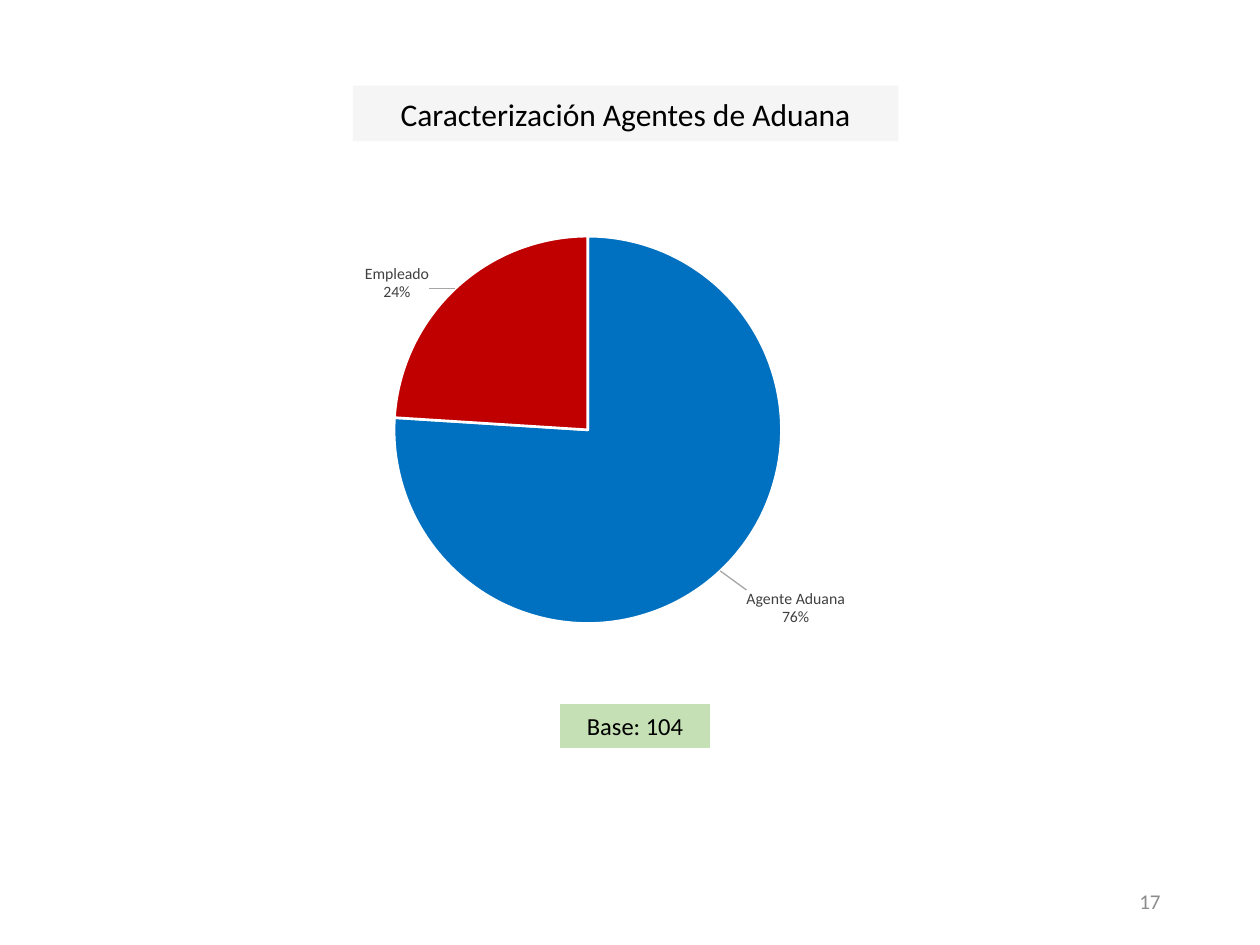
from pptx import Presentation
from pptx.chart.data import CategoryChartData
from pptx.dml.color import RGBColor
from pptx.enum.chart import XL_CHART_TYPE, XL_LABEL_POSITION
from pptx.enum.shapes import MSO_SHAPE
from pptx.enum.text import MSO_ANCHOR, MSO_AUTO_SIZE, PP_ALIGN
from pptx.oxml import parse_xml
from pptx.oxml.ns import nsdecls
from pptx.util import Inches, Pt

FONT = "Calibri"
BLACK = RGBColor(0x00, 0x00, 0x00)
WHITE = RGBColor(0xFF, 0xFF, 0xFF)
GRAY = RGBColor(0x8C, 0x8C, 0x8C)
DARK_GRAY = RGBColor(0x40, 0x40, 0x40)
LIGHT_GRAY = RGBColor(0xF5, 0xF5, 0xF5)
GREEN = RGBColor(0xC5, 0xE0, 0xB4)
BLUE = RGBColor(0x00, 0x70, 0xC0)
RED = RGBColor(0xC0, 0x00, 0x00)

# Category, value, slice colour, label shift as a share of the chart size
SLICES = [
    ("Agente Aduana", 76, BLUE, (0.03, 0.03)),
    ("Empleado", 24, RED, (-0.03, 0.04)),
]


def style_font(font, size, color):
    font.name = FONT
    font.size = Pt(size)
    font.color.rgb = color


def set_text(sp, text, size, color=BLACK, align=PP_ALIGN.CENTER):
    tf = sp.text_frame
    tf.word_wrap = True
    tf.auto_size = MSO_AUTO_SIZE.NONE
    tf.vertical_anchor = MSO_ANCHOR.MIDDLE
    p = tf.paragraphs[0]
    p.alignment = align
    r = p.add_run()
    r.text = text
    style_font(r.font, size, color)


def add_title(slide, text):
    sp = slide.shapes.title
    sp.left, sp.top = Inches(2.8), Inches(0.68)
    sp.width, sp.height = Inches(4.33), Inches(0.44)
    sp.fill.solid()
    sp.fill.fore_color.rgb = LIGHT_GRAY
    set_text(sp, text, 18)


def add_base(slide, text):
    sp = slide.shapes.add_shape(MSO_SHAPE.RECTANGLE, Inches(4.45), Inches(5.59),
                                Inches(1.18), Inches(0.34))
    sp.shadow.inherit = False
    sp.fill.solid()
    sp.fill.fore_color.rgb = GREEN
    sp.line.color.rgb = GREEN
    sp.line.width = Pt(0.75)
    set_text(sp, text, 14)


def add_page_number(slide, text):
    box = slide.shapes.add_textbox(Inches(7.06), Inches(6.95), Inches(2.25), Inches(0.4))
    set_text(box, text, 12, color=GRAY, align=PP_ALIGN.RIGHT)


def manual_layout(x, y, extra=""):
    return parse_xml(
        f'<c:layout {nsdecls("c")}><c:manualLayout>{extra}'
        f'<c:x val="{x}"/><c:y val="{y}"/></c:manualLayout></c:layout>')


def place_plot(chart, x, y, w, h):
    """Fix the inner plot area, given as shares of the chart size."""
    layout = manual_layout(
        x, y, '<c:layoutTarget val="inner"/><c:xMode val="edge"/><c:yMode val="edge"/>')
    for tag, value in (("w", w), ("h", h)):
        layout[0].append(parse_xml(f'<c:{tag} {nsdecls("c")} val="{value}"/>'))
    plot_area = chart.element.xpath(".//c:plotArea")[0]
    for old in plot_area.xpath("./c:layout"):
        plot_area.remove(old)
    plot_area.insert(0, layout)


def style_slice(point, color):
    point.format.fill.solid()
    point.format.fill.fore_color.rgb = color
    point.format.line.color.rgb = WHITE
    point.format.line.width = Pt(1.5)


def format_labels(chart, series):
    """Show category over percentage, outside the pie, with leader lines."""
    labels = series.data_labels
    labels.show_value = False
    labels.show_category_name = labels.show_percentage = True
    labels.number_format = "0%"
    labels.number_format_is_linked = False
    labels.position = XL_LABEL_POSITION.OUTSIDE_END
    style_font(labels.font, 9, DARK_GRAY)
    for i in range(len(SLICES)):
        label = series.points[i].data_label
        style_font(label.font, 9, DARK_GRAY)
        label.position = XL_LABEL_POSITION.OUTSIDE_END

    separator = f'<c:separator {nsdecls("c")}>\n</c:separator>'
    for d, (_, _, _, shift) in zip(chart.element.xpath(".//c:dLbl"), SLICES):
        d.xpath("./c:idx")[0].addnext(manual_layout(*shift))
        d.xpath("./c:showVal")[0].set("val", "0")
        for tag in ("showCatName", "showPercent"):
            d.xpath(f"./c:{tag}")[0].set("val", "1")
        d.xpath("./c:showBubbleSize")[0].addnext(parse_xml(separator))
        d.xpath("./c:layout")[0].addnext(parse_xml(
            f'<c:numFmt {nsdecls("c")} formatCode="0%" sourceLinked="0"/>'))

    leader = chart.element.xpath(".//c:ser/c:dLbls/c:showLeaderLines")[0]
    leader.set("val", "1")
    leader.addprevious(parse_xml(separator))
    leader.addnext(parse_xml(
        f'<c:leaderLines {nsdecls("c", "a")}><c:spPr><a:ln w="9525"><a:solidFill>'
        '<a:srgbClr val="A6A6A6"/></a:solidFill></a:ln></c:spPr></c:leaderLines>'))


def add_pie(slide):
    data = CategoryChartData()
    data.categories = [name for name, *_ in SLICES]
    data.add_series("Series 1", [value for _, value, *_ in SLICES])
    chart = slide.shapes.add_chart(XL_CHART_TYPE.PIE, Inches(2.01), Inches(1.62),
                                   Inches(5.59), Inches(3.62), data).chart
    chart.has_legend = False
    chart.has_title = False
    style_font(chart.font, 10, BLACK)
    plot = chart.plots[0]
    plot.vary_by_categories = True
    series = plot.series[0]
    for i, (_, _, color, _) in enumerate(SLICES):
        style_slice(series.points[i], color)
    format_labels(chart, series)
    place_plot(chart, 0.2, 0.07, 0.55, 0.85)


def main():
    prs = Presentation()
    prs.slide_width, prs.slide_height = Inches(10), Inches(7.5)
    slide = prs.slides.add_slide(prs.slide_layouts[5])
    add_page_number(slide, "17")
    add_title(slide, "Caracterización Agentes de Aduana")
    add_pie(slide)
    add_base(slide, "Base: 104")
    prs.save("out.pptx")


if __name__ == "__main__":
    main()
